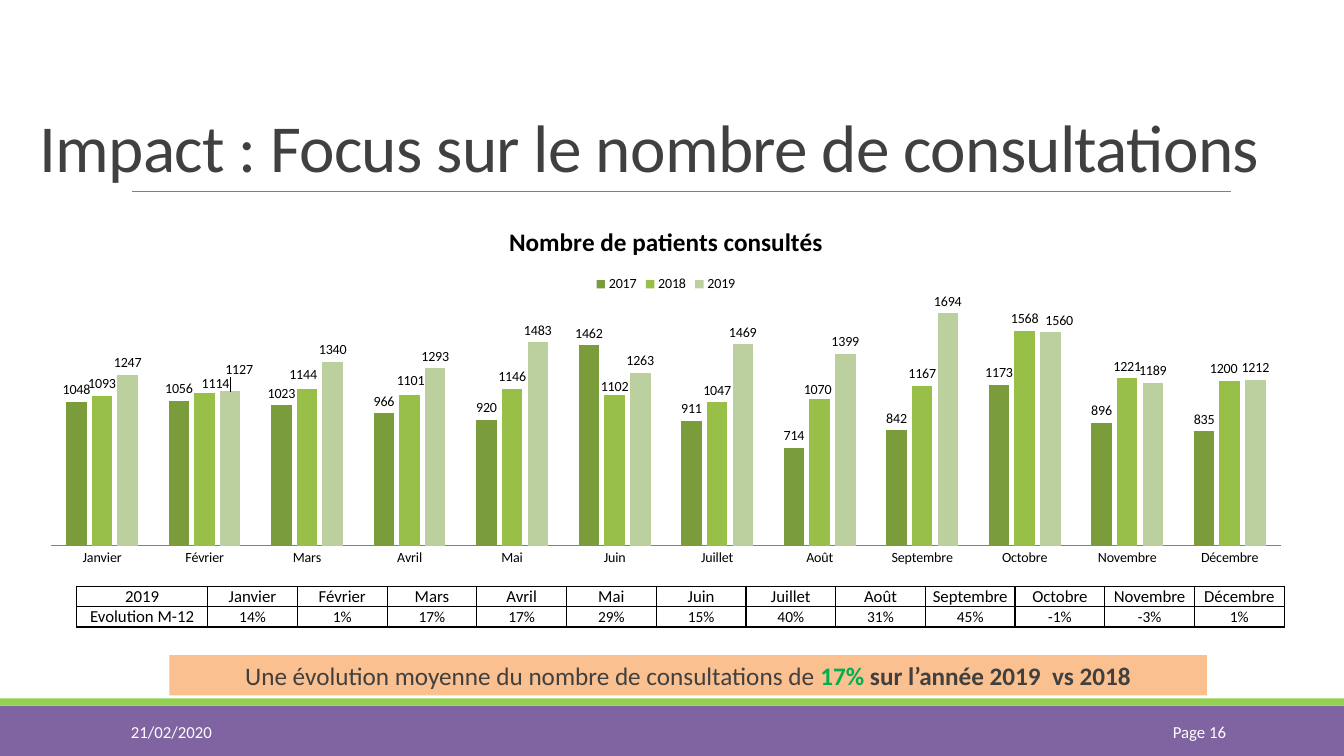
from lxml import etree
from pptx import Presentation
from pptx.chart.data import CategoryChartData
from pptx.dml.color import RGBColor
from pptx.enum.chart import XL_CHART_TYPE, XL_LABEL_POSITION, XL_LEGEND_POSITION, XL_TICK_MARK
from pptx.enum.shapes import MSO_CONNECTOR, MSO_SHAPE
from pptx.enum.text import MSO_ANCHOR, PP_ALIGN
from pptx.oxml import parse_xml
from pptx.oxml.ns import nsdecls, qn
from pptx.util import Pt

PX = 9144
LEFT, MID, RIGHT = PP_ALIGN.LEFT, PP_ALIGN.CENTER, PP_ALIGN.RIGHT
CENTER, LOW = MSO_ANCHOR.MIDDLE, MSO_ANCHOR.BOTTOM
RECT = MSO_SHAPE.RECTANGLE
LINE = MSO_CONNECTOR.STRAIGHT
COLUMN = XL_CHART_TYPE.COLUMN_CLUSTERED
ABOVE = XL_LABEL_POSITION.OUTSIDE_END
TOP = XL_LEGEND_POSITION.TOP
NO_TICK = XL_TICK_MARK.NONE
INK = {"purple": "8064A2", "lime": "92D050", "gray": "808080", "dark": "404040",
       "white": "FFFFFF", "black": "000000", "peach": "FAC090", "green": "00B050",
       "2017": "7B9C3A", "2018": "98C048", "2019": "BBD09E"}


def rgb(name):
    return RGBColor.from_string(INK[name])


def write(frame, text, size=12, color="black", bold=False, align=LEFT, anchor=CENTER):
    frame.word_wrap = True
    frame.vertical_anchor = anchor
    par = frame.paragraphs[0]
    par.alignment = align
    run = par.add_run()
    run.text = text
    run.font.name = "Calibri"
    run.font.size = Pt(size)
    run.font.bold = bold
    run.font.color.rgb = rgb(color)
    return run


deck = Presentation()
deck.slide_width, deck.slide_height = 1333 * PX, 750 * PX
slide = deck.slides.add_slide(deck.slide_layouts[5])
shapes = slide.shapes

bars = []
for x, y, w, h, fill in [(0, 700, 1333, 50, "purple"), (0, 693, 1333, 7, "lime"),
                         (168, 650, 1029, 40, "peach")]:
    bar = shapes.add_shape(RECT, x * PX, y * PX, w * PX, h * PX)
    bar.shadow.inherit = False
    bar.fill.solid()
    bar.fill.fore_color.rgb = rgb(fill)
    bar.line.fill.background()
    bars.append(bar)
banner = bars[-1].text_frame
for text, color, bold in [("Une évolution moyenne du nombre de consultations de ", "dark", False),
                          ("17% ", "green", True),
                          ("sur l’année 2019  vs 2018", "dark", True)]:
    write(banner, text, size=18, color=color, bold=bold, align=MID)

rule = shapes.add_connector(LINE, 131 * PX, 190 * PX, 1221 * PX, 190 * PX)
rule.line.color.rgb = rgb("gray")
rule.line.width = Pt(0.5)
etree.SubElement(rule._element.spPr, qn("a:effectLst"))

title = shapes.title
title.left, title.top, title.width, title.height = 29 * PX, 31 * PX, 1236 * PX, 159 * PX
head = write(title.text_frame, "Impact : Focus sur le nombre de consultations",
             size=48, color="dark", anchor=LOW)
head.font._element.set("spc", "-50")
title.text_frame.paragraphs[0].line_spacing = 0.85

for x, w, text, align in [(120, 270, "21/02/2020", LEFT), (1083, 143, "Page 16", RIGHT)]:
    box = shapes.add_textbox(x * PX, 706 * PX, w * PX, 40 * PX)
    write(box.text_frame, text, color="white", align=align)

months = ["Janvier", "Février", "Mars", "Avril", "Mai", "Juin", "Juillet", "Août",
          "Septembre", "Octobre", "Novembre", "Décembre"]
rates = [14, 1, 17, 17, 29, 15, 40, 31, 45, -1, -3, 1]
rows = [["2019"] + months, ["Evolution M-12"] + [f"{rate}%" for rate in rates]]
table = shapes.add_table(2, 13, 76 * PX, 582 * PX, 1197 * PX, 40 * PX).table
table.first_row = table.horz_banding = False
for i, col in enumerate(table.columns):
    col.width = (89 if i else 130) * PX
for r, row in enumerate(rows):
    table.rows[r].height = 20 * PX
    for c, text in enumerate(row):
        cell = table.cell(r, c)
        cell.margin_left = cell.margin_right = cell.margin_top = cell.margin_bottom = 0
        cell.vertical_anchor = LOW
        write(cell.text_frame, text, size=11 if r and c else 12, align=MID, anchor=LOW)
        for side in ("lnL", "lnR", "lnT", "lnB"):
            cell._tc.get_or_add_tcPr().append(parse_xml(
                f'<a:{side} {nsdecls("a")} w="12700"><a:solidFill>'
                f'<a:srgbClr val="{INK["black"]}"/></a:solidFill></a:{side}>'))
        cell.fill.background()

data = CategoryChartData()
data.categories = months
data.add_series("2017", [1048, 1056, 1023, 966, 920, 1462, 911, 714, 842, 1173, 896, 835])
data.add_series("2018", [1093, 1114, 1144, 1101, 1146, 1102, 1047, 1070, 1167, 1568, 1221, 1200])
data.add_series("2019", [1247, 1127, 1340, 1293, 1483, 1263, 1469, 1399, 1694, 1560, 1189, 1212])
chart = shapes.add_chart(COLUMN, 25 * PX, 205 * PX, 1271 * PX, 366 * PX, data).chart
chart.font.name = "Calibri"
chart.font.size = Pt(10)
chart.font.color.rgb = rgb("black")
chart.has_title = True
write(chart.chart_title.text_frame, "Nombre de patients consultés", size=18, bold=True, align=MID)
chart.has_legend = True
chart.legend.position = TOP
chart.legend.include_in_layout = False
scale = chart.value_axis
scale.minimum_scale, scale.maximum_scale = 0, 1800
scale.has_major_gridlines = False
scale.visible = False
axis = chart.category_axis
axis.major_tick_mark = NO_TICK
axis.format.line.color.rgb = rgb("gray")

plot = chart.plots[0]
plot.gap_width, plot.overlap = 150, -25
plot.vary_by_categories = False
shifts = {"2018": {1: (11, 3), 2: (-4, -2), 3: (1, -2), 5: (0, 4), 7: (-2, 3), 11: (-6, -1)},
          "2019": {1: (9, -10), 9: (9, 1)}}
for ser in plot.series:
    ser.format.fill.solid()
    ser.format.fill.fore_color.rgb = rgb(ser.name)
    tags = ser.data_labels
    tags.show_value = True
    tags.position = ABOVE
    tags.font.size = Pt(10)
    for i, (x, y) in shifts.get(ser.name, {}).items():
        tag = ser.points[i].data_label
        tag.font.size = Pt(10)
        tag.position = ABOVE
        idx = ser._element.xpath(f'c:dLbls/c:dLbl/c:idx[@val="{i}"]')[0]
        idx.addnext(parse_xml(
            f'<c:layout {nsdecls("c")}><c:manualLayout><c:x val="{x / 1281:.4f}"/>'
            f'<c:y val="{y / 369:.4f}"/></c:manualLayout></c:layout>'))

area = chart._chartSpace.chart.plotArea
for old in area.findall(qn("c:layout")):
    area.remove(old)
area.insert(0, parse_xml(
    f'<c:layout {nsdecls("c")}><c:manualLayout><c:layoutTarget val="inner"/>'
    '<c:xMode val="edge"/><c:yMode val="edge"/><c:x val="0.02"/><c:y val="0.25"/>'
    '<c:w val="0.96"/><c:h val="0.67"/></c:manualLayout></c:layout>'))

deck.save("out.pptx")
